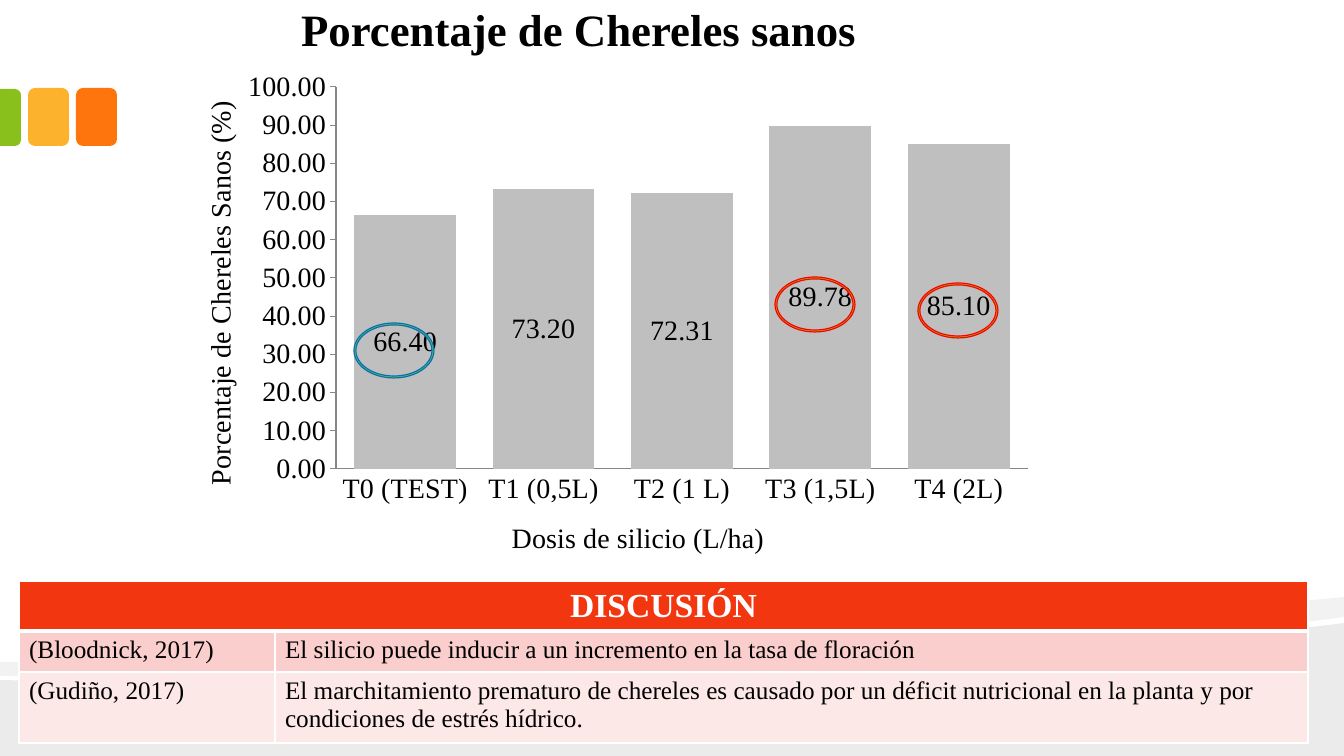
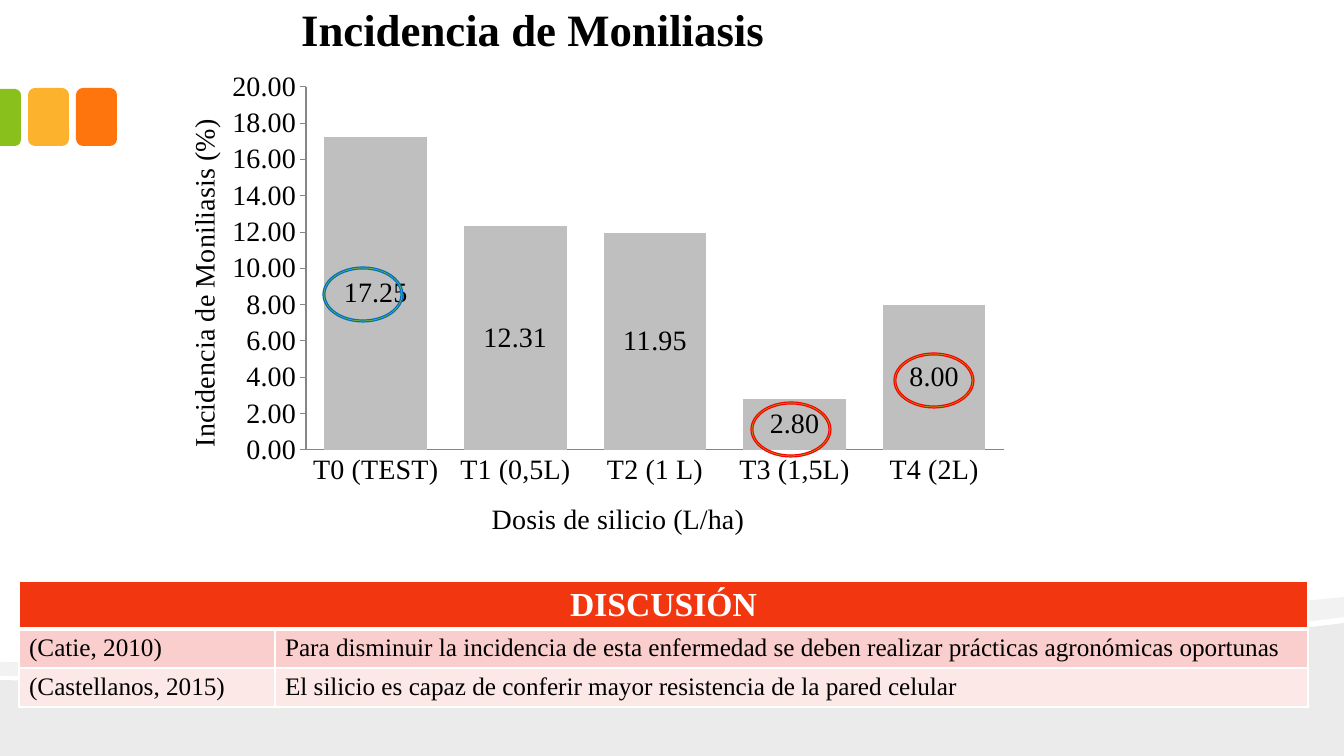
from dataclasses import dataclass
from typing import Any

from lxml.etree import SubElement
from pptx import Presentation
from pptx.chart.data import CategoryChartData
from pptx.dml.color import RGBColor
from pptx.enum.chart import XL_CHART_TYPE, XL_LABEL_POSITION, XL_TICK_MARK
from pptx.enum.shapes import MSO_SHAPE
from pptx.enum.text import MSO_ANCHOR, MSO_AUTO_SIZE, PP_ALIGN
from pptx.oxml import parse_xml
from pptx.oxml.ns import nsdecls, qn
from pptx.util import Emu, Pt

PX = 914400 / 100.8
FONT = "Times New Roman"
BLACK, WHITE, GREY, AXIS = "000000", "FFFFFF", "BFBFBF", "868686"
RED, BLUE, GREEN = "FF0000", "0070C0", "89C01C"
AMBER, ORANGE, HEAD = "FCB22C", "FE750E", "F23610"
BANDS = ("FACECC", "FCE8E7")
DOSES = ("T0 (TEST)", "T1 (0,5L)", "T2 (1 L)", "T3 (1,5L)", "T4 (2L)")

Point = tuple[int, int]
Box = tuple[int, int, int, int]


@dataclass
class Ring:
    x: int
    y: int
    color: str


@dataclass
class Study:
    title: str
    label: str
    box: Box
    plot: Box
    mark: Point
    top: int
    step: int
    vals: tuple[float, ...]
    rings: tuple[Ring, ...]
    rows: tuple[tuple[str, str], ...]
    highs: tuple[int, ...]


STUDIES = (
    Study(
        "Porcentaje de Chereles sanos", "Porcentaje de Chereles Sanos (%)",
        (171, 61, 873, 519), (336, 87, 692, 382), (197, 96),
        100, 10, (66.4, 73.2, 72.31, 89.78, 85.1),
        (Ring(775, 277, RED), Ring(918, 283, RED), Ring(354, 323, BLUE)),
        (("(Bloodnick, 2017)",
          "El silicio puede inducir a un incremento en la tasa de floración"),
         ("(Gudiño, 2017)",
          "El marchitamiento prematuro de chereles es causado por un déficit "
          "nutricional en la planta y por condiciones de estrés hídrico.")),
        (50, 41, 71),
    ),
    Study(
        "Incidencia de Moniliasis", "Incidencia de Moniliasis (%)",
        (156, 61, 865, 500), (306, 87, 698, 363), (181, 114),
        20, 2, (17.25, 12.31, 11.95, 2.8, 8),
        (Ring(751, 402, RED), Ring(894, 353, RED), Ring(323, 267, BLUE)),
        (("(Catie, 2010)",
          "Para disminuir la incidencia de esta enfermedad se deben realizar "
          "prácticas agronómicas oportunas"),
         ("(Castellanos, 2015)",
          "El silicio es capaz de conferir mayor resistencia de la pared celular")),
        (48, 39, 39),
    ),
)


def px(n: float) -> Emu:
    return Emu(round(n * PX))


def rgb(code: str) -> RGBColor:
    return RGBColor.from_string(code)


def style(font: Any, size: int, color: str = BLACK, bold: bool = False) -> None:
    font.name, font.size, font.bold = FONT, Pt(size), bold
    font.color.rgb = rgb(color)


def paint(shape: Any, color: str, line: str = "", alpha: int = 100) -> None:
    """Fill and outline a shape; alpha is the opacity in percent."""
    shape.shadow.inherit = False
    shape.fill.solid()
    shape.fill.fore_color.rgb = rgb(color)
    if alpha < 100:
        clr = next(shape.element.spPr.iter(qn("a:srgbClr")))
        SubElement(clr, qn("a:alpha")).set("val", str(alpha * 1000))
    if line:
        shape.line.color.rgb = rgb(line)
        shape.line.width = Pt(0.85)
    else:
        shape.line.fill.background()


def add_form(shapes: Any, kind: MSO_SHAPE, box: Box, color: str, line: str = "") -> Any:
    form = shapes.add_shape(kind, *map(px, box))
    paint(form, color, line)
    return form


def add_wave(shapes: Any, pts: list[Point], bends: tuple[int, ...], alpha: int) -> Any:
    """Draw an outline; each bend is where three points make one Bezier curve."""
    first, *rest = [(px(x), px(y)) for x, y in pts]
    pen = shapes.build_freeform(*first)
    pen.add_line_segments(rest, close=True)
    wave = pen.convert_to_shape()
    steps = list(next(wave.element.iter(qn("a:moveTo"))).getparent())
    for i in bends:
        steps[i].tag = qn("a:cubicBezTo")
        for step in steps[i + 1:i + 3]:
            steps[i].append(step[0])
            step.getparent().remove(step)
    paint(wave, BLACK, alpha=alpha)
    return wave


def dress(layout: Any, shapes: Any) -> None:
    """Give the layout its waves, chips and title place, drawn first on a slide."""
    hill = [(1344, 756), (0, 756), (0, 680), (355, 688), (1050, 660), (1344, 623)]
    band = [(1344, 597), (1344, 617), (1265, 628), (1158, 638), (1037, 646),
            (704, 668), (260, 682), (0, 676), (0, 662),
            (657, 667), (979, 632), (1344, 597)]
    chip = add_form(shapes, MSO_SHAPE.ROUND_2_SAME_RECTANGLE, (-18, 107, 57, 21), GREEN)
    chip.rotation = 90
    chip.adjustments[0] = 0.29
    parts = [add_wave(shapes, hill, (3,), 8), add_wave(shapes, band, (2, 5, 9), 5), chip]
    for x, color in ((28, AMBER), (76, ORANGE)):
        parts.append(add_form(shapes, MSO_SHAPE.ROUNDED_RECTANGLE, (x, 88, 41, 58), color))
    for i, part in enumerate(parts, 100):
        next(part.element.iter(qn("p:cNvPr"))).set("id", str(i))
        layout.shapes.element.append(part.element)

    title = layout.placeholders[0]
    title.left, title.top, title.width, title.height = map(px, (291, -3, 977, 64))
    title.text_frame.vertical_anchor = MSO_ANCHOR.TOP
    title.text_frame.auto_size = MSO_AUTO_SIZE.NONE


def name_axis(axis: Any, text: str, turn: int) -> None:
    frame = axis.axis_title.text_frame
    frame.text = text
    style(frame.paragraphs[0].font, 20)
    body = next(axis.axis_title.element.iter(qn("a:bodyPr")))
    body.set("rot", str(turn * 60000))
    body.set("vert", "horz")


def place(node: Any, index: int, frame: Box, spot: tuple[int, ...]) -> None:
    """Fix a chart part at a spot (x, y and maybe size) inside the chart frame."""
    for old in node.findall(qn("c:layout")):
        node.remove(old)
    layout = parse_xml(f'<c:layout {nsdecls("c")}/>')
    node.insert(index, layout)
    manual = SubElement(layout, qn("c:manualLayout"))
    x, y, wide, high = frame
    vals = [("xMode", "edge"), ("yMode", "edge"),
            ("x", (spot[0] - x) / wide), ("y", (spot[1] - y) / high)]
    if len(spot) == 4:
        vals.insert(0, ("layoutTarget", "inner"))
        vals += [("w", spot[2] / wide), ("h", spot[3] / high)]
    for tag, val in vals:
        SubElement(manual, qn(f"c:{tag}")).set("val", str(val))


def add_bars(shapes: Any, study: Study) -> None:
    data = CategoryChartData()
    data.categories = DOSES
    data.add_series("Series 1", study.vals)
    kind = XL_CHART_TYPE.COLUMN_CLUSTERED
    chart = shapes.add_chart(kind, *map(px, study.box), data).chart
    chart.has_legend = chart.has_title = False
    style(chart.font, 20)

    doses, scale = chart.category_axis, chart.value_axis
    name_axis(doses, "Dosis de silicio (L/ha)", 0)
    name_axis(scale, study.label, -90)
    place(scale.axis_title.element, 1, study.box, study.mark)
    area = next(chart.element.iter(qn("c:plotArea")))
    place(area, 0, study.box, study.plot)
    for axis, tick in ((doses, XL_TICK_MARK.NONE), (scale, XL_TICK_MARK.OUTSIDE)):
        axis.has_major_gridlines = False
        axis.major_tick_mark, axis.minor_tick_mark = tick, XL_TICK_MARK.NONE
        axis.format.line.color.rgb = rgb(AXIS)
        axis.format.line.width = Pt(0.75)
    scale.minimum_scale, scale.maximum_scale = 0, study.top
    scale.major_unit = study.step

    plot = chart.plots[0]
    plot.gap_width, plot.overlap, plot.vary_by_categories = 36, 68, False
    plot.has_data_labels = True
    tags = plot.data_labels
    tags.show_value, tags.position = True, XL_LABEL_POSITION.CENTER
    style(tags.font, 20)
    for item in (scale.tick_labels, tags):
        item.number_format, item.number_format_is_linked = "0.00", False
    fill = plot.series[0].format.fill
    fill.solid()
    fill.fore_color.rgb = rgb(GREY)


def edge(cell: Any, **widths: int) -> None:
    """Draw white borders, 1 pt unless a side (L, R, T, B) says more."""
    props = cell._tc.get_or_add_tcPr()
    for i, side in enumerate("LRTB"):
        width = Pt(widths.get(side, 1))
        props.insert(i, parse_xml(
            f'<a:ln{side} {nsdecls("a")} w="{width}"><a:solidFill>'
            f'<a:srgbClr val="{WHITE}"/></a:solidFill></a:ln{side}>'))


def add_talk(shapes: Any, study: Study) -> None:
    rows = (("DISCUSIÓN", ""), *study.rows)
    box = (19, 581, 1289, sum(study.highs))
    table = shapes.add_table(len(rows), 2, *map(px, box)).table
    for col, wide in zip(table.columns, (256, 1033)):
        col.width = px(wide)
    table.cell(0, 0).merge(table.cell(0, 1))
    for r, (row, high) in enumerate(zip(rows, study.highs)):
        table.rows[r].height = px(high)
        for c, text in enumerate(row):
            cell = table.cell(r, c)
            cell.fill.solid()
            cell.fill.fore_color.rgb = rgb(BANDS[r - 1] if r else HEAD)
            edge(cell, **({"B": 3}, {"T": 3}, {})[r])
            if not text:
                continue
            cell.text = text
            para = cell.text_frame.paragraphs[0]
            if r:
                style(para.font, 18)
            else:
                style(para.font, 24, WHITE, True)
                para.alignment = PP_ALIGN.CENTER
                cell.vertical_anchor = MSO_ANCHOR.MIDDLE
                cell.margin_top = cell.margin_bottom = px(3)


def add_study(slide: Any, study: Study) -> None:
    title = slide.shapes.title
    title.text = study.title
    para = title.text_frame.paragraphs[0]
    para.alignment = PP_ALIGN.LEFT
    style(para.font, 32, BLACK, True)
    add_bars(slide.shapes, study)
    add_talk(slide.shapes, study)
    for ring in study.rings:
        box = (ring.x, ring.y, 80, 55)
        donut = add_form(slide.shapes, MSO_SHAPE.DONUT, box, GREEN, ring.color)
        donut.adjustments[0] = 0.035


def main() -> None:
    deck = Presentation()
    deck.slide_width, deck.slide_height = px(1344), px(756)
    layout = deck.slide_layouts[5]
    slides = [deck.slides.add_slide(layout) for _ in STUDIES]
    dress(layout, slides[0].shapes)
    for slide, study in zip(slides, STUDIES):
        add_study(slide, study)
    deck.save("out.pptx")


if __name__ == "__main__":
    main()
